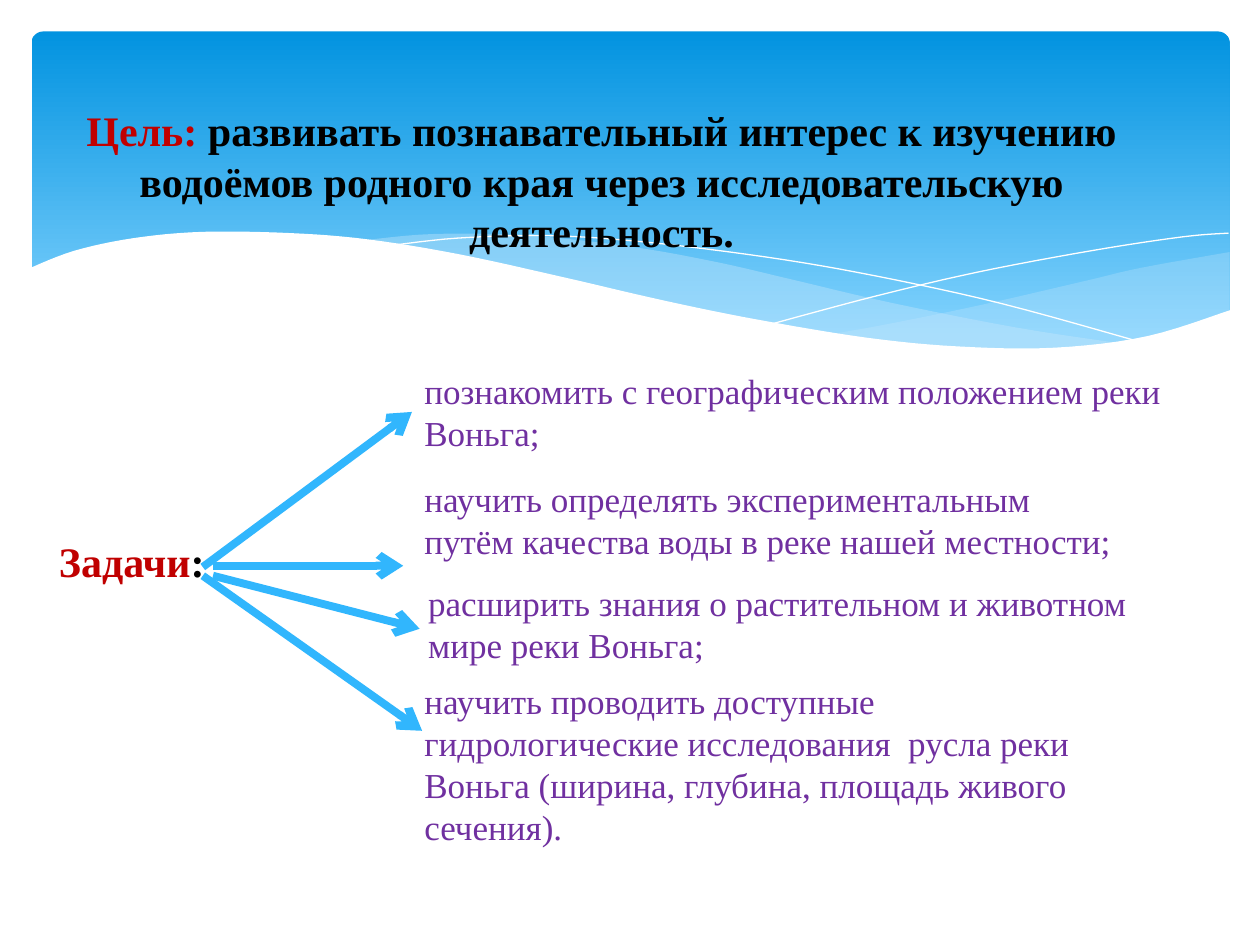
from lxml.etree import SubElement
from pptx import Presentation
from pptx.dml.color import RGBColor
from pptx.enum.shapes import MSO_CONNECTOR, MSO_SHAPE
from pptx.enum.text import MSO_ANCHOR, PP_ALIGN
from pptx.oxml.ns import qn
from pptx.util import Pt

RED, BLACK, PURPLE, BLUE, WHITE = "C00000", "000000", "7030A0", "31B6FD", "FFFFFF"
HEADING = {"name": "Times New Roman", "size": Pt(24), "bold": True}
BODY = {"name": "Times New Roman", "size": Pt(20), "bold": False}

GOAL = [
    ("Цель: ", RED),
    ("развивать познавательный интерес к изучению водоёмов родного края "
     "через исследовательскую деятельность.", BLACK),
]
TASKS_LABEL = [("Задачи", RED), (":", BLACK)]
TASKS = [
    ("познакомить с географическим положением реки Воньга;", (235.4, 207.4, 476, 55.4)),
    ("научить определять экспериментальным путём качества воды в реке нашей местности;",
     (235.4, 269.3, 411, 55.4)),
    ("расширить знания о растительном и животном мире реки Воньга;",
     (237.6, 329, 436.3, 55.4)),
    ("научить проводить доступные гидрологические исследования  русла реки Воньга "
     "(ширина, глубина, площадь живого сечения).", (235.4, 384.5, 411, 104.4)),
]
ARROWS = [
    ((121.7, 323.3), (230.4, 323.3)),
    ((115.9, 324), (235.4, 235.4)),
    ((121.7, 329), (239.8, 359.3)),
    ((115.9, 329), (241.2, 417.6)),
]
WAVES = [
    {"fill": "C6E7FC", "opacity": 29, "curves": [
        [(702.7, 144), (652.3, 153), (619.9, 160.6), (560.9, 174.2), (508.3, 185),
         (475.9, 190.8)],
        [(475.9, 190.8), (527, 197.3), (570.2, 199.6), (614.9, 198.7), (657.4, 192.2),
         (702.7, 177.8)]]},
    {"fill": "C6E7FC", "opacity": 40, "curves": [
        [(643, 196.6), (581, 187.2), (508.3, 172.8), (452.9, 159.8), (409.7, 149.8),
         (361.4, 141.1), (302.4, 134.6), (247.7, 133.7), (205.9, 137.5)],
        [(205.9, 137.5), (260.6, 146.2), (323.3, 159.8), (407.5, 178.6), (468, 190.1),
         (529.9, 198), (581, 200.2), (624.2, 198.7), (643, 196.6)]]},
    {"line": WHITE, "curves": [
        [(222.5, 140.4), (261.4, 136.1), (311.8, 134.6), (367.2, 138.2), (437.8, 146.9),
         (500.4, 157.7), (572.4, 173.5), (653, 195.8)]]},
    {"line": WHITE, "curves": [
        [(441.4, 185), (500.4, 169.2), (558.7, 155.5), (623.5, 143.3), (675.4, 135.4),
         (702, 133.2)]]},
    {"fill": WHITE, "opacity": 100, "curves": [
        [(703.4, 177.1), (655.2, 192.2), (602.6, 198.7), (547.9, 198), (495.4, 193),
         (434.2, 182.9), (380.9, 172.1), (321.8, 158.4), (262.8, 145.4), (210.2, 136.8),
         (165.6, 133.2), (115.9, 132.5), (76.3, 136.1), (42.5, 143.3), (16.6, 153.4)],
        [(16.6, 236.9), (703.4, 236.9)]]},
]


def color(value):
    return RGBColor.from_string(value)


def set_values(target, values):
    for name, value in values.items():
        setattr(target, name, value)


def smooth(points, steps=6):
    """Return a Catmull-Rom curve through the points."""
    padded = [points[0], *points, points[-1]]
    curve = [points[0]]
    for a, b, c, d in zip(padded, padded[1:], padded[2:], padded[3:]):
        for step in range(1, steps + 1):
            t = step / steps
            curve.append(tuple(
                (2 * q + (r - p) * t + (2 * p - 5 * q + 4 * r - s) * t ** 2
                 + (3 * q - p - 3 * r + s) * t ** 3) / 2
                for p, q, r, s in zip(a, b, c, d)))
    return curve


def place(shape, box):
    set_values(shape, dict(zip(("left", "top", "width", "height"), map(Pt, box))))


def write(shape, runs, font, alignment=PP_ALIGN.LEFT, anchor=MSO_ANCHOR.TOP):
    set_values(shape.text_frame, {"word_wrap": True, "vertical_anchor": anchor})
    paragraph = shape.text_frame.paragraphs[0]
    paragraph.alignment = alignment
    for text, run_color in runs:
        run = paragraph.add_run()
        run.text = text
        set_values(run.font, font)
        run.font.color.rgb = color(run_color)


def add_text(slide, box, runs, font):
    write(slide.shapes.add_textbox(*map(Pt, box)), runs, font)


def add_banner(slide):
    box = map(Pt, (18, 18, 684.7, 194.4))
    banner = slide.shapes.add_shape(MSO_SHAPE.ROUNDED_RECTANGLE, *box)
    banner.adjustments[0] = 0.034
    banner.shadow.inherit = False
    banner.line.fill.background()
    banner.fill.gradient()
    banner.fill.gradient_angle = 270
    stops = ((0, "0293E0"), (0.9, "83D3FE"))
    for stop, (position, stop_color) in zip(banner.fill.gradient_stops, stops):
        stop.position = position
        stop.color.rgb = color(stop_color)


def add_wave(slide, wave):
    points = [tuple(map(Pt, point)) for curve in wave["curves"] for point in smooth(curve)]
    builder = slide.shapes.build_freeform(*points[0])
    builder.add_line_segments(points[1:], close="fill" in wave)
    shape = builder.convert_to_shape()
    shape.shadow.inherit = False
    if "fill" in wave:
        shape.fill.solid()
        shape.fill.fore_color.rgb = color(wave["fill"])
        shape.line.fill.background()
        fill_color = shape._element.spPr.find(qn("a:solidFill"))[0]
        SubElement(fill_color, qn("a:alpha"), val=str(wave["opacity"] * 1000))
    else:
        shape.fill.background()
        shape.line.color.rgb = color(wave["line"])
        shape.line.width = Pt(0)


def add_arrow(slide, start, end):
    arrow = slide.shapes.add_connector(MSO_CONNECTOR.STRAIGHT, *map(Pt, start + end))
    arrow.line.color.rgb = color(BLUE)
    arrow.line.width = Pt(4.5)
    properties = arrow._element.spPr
    SubElement(properties.find(qn("a:ln")), qn("a:tailEnd"), type="arrow")
    SubElement(properties, qn("a:effectLst"))


def main():
    presentation = Presentation()
    set_values(presentation, {"slide_width": Pt(720), "slide_height": Pt(540)})
    slide = presentation.slides.add_slide(presentation.slide_layouts[5])
    add_banner(slide)
    for wave in WAVES:
        add_wave(slide, wave)
    title = slide.shapes.title
    slide.shapes._spTree.append(title._element)
    place(title, (26.6, 49, 634.3, 108))
    write(title, GOAL, HEADING, PP_ALIGN.CENTER, MSO_ANCHOR.MIDDLE)
    add_text(slide, (26.6, 302.2, 303.8, 36), TASKS_LABEL, HEADING)
    for text, box in TASKS:
        add_text(slide, box, [(text, PURPLE)], BODY)
    for start, end in ARROWS:
        add_arrow(slide, start, end)
    presentation.save("out.pptx")


if __name__ == "__main__":
    main()
